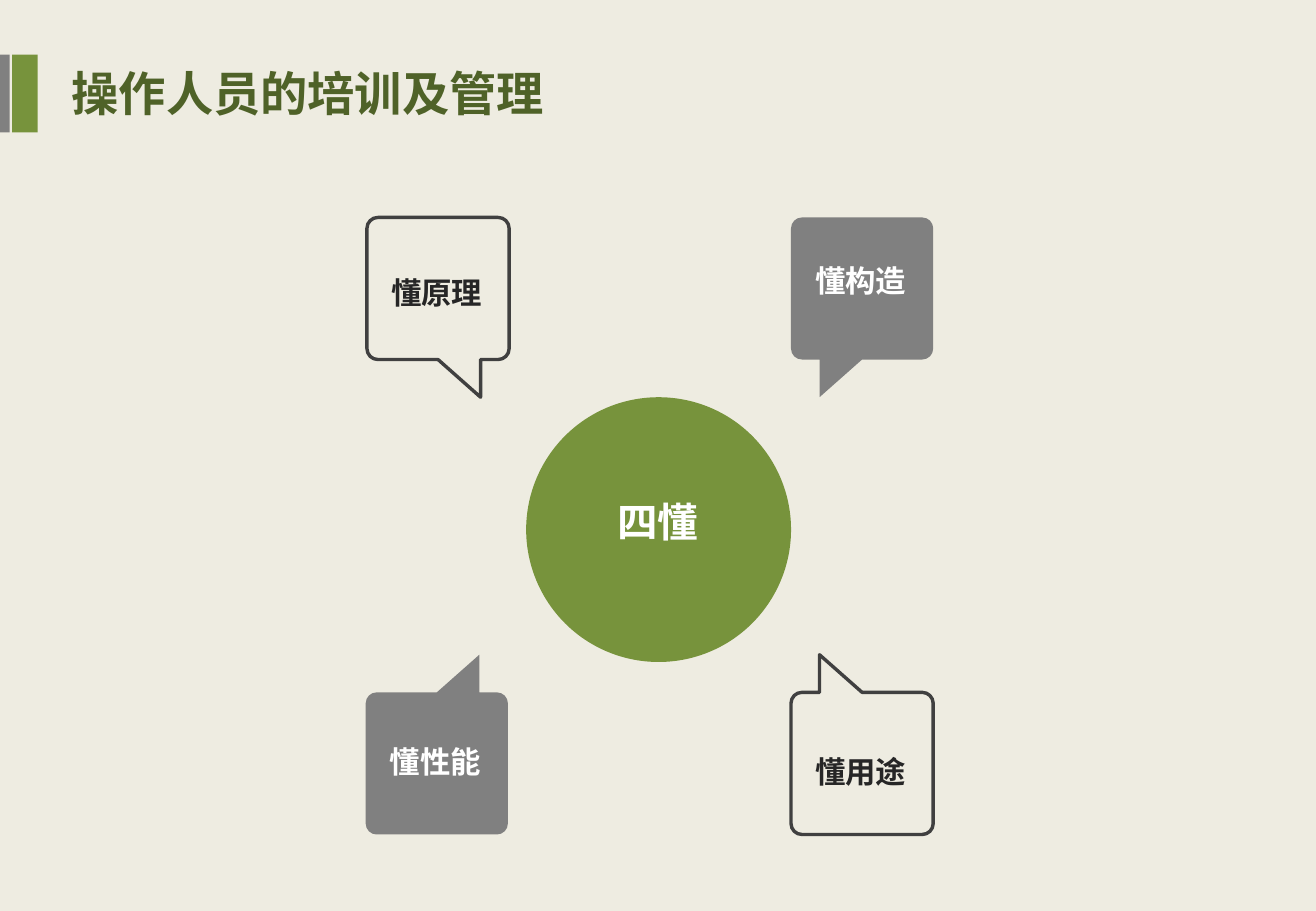
from pptx import Presentation
from pptx.dml.color import RGBColor
from pptx.enum import shapes, text
from pptx.oxml import ns
from pptx.util import Inches, Pt

FONT = "Noto Sans CJK SC"
COLORS = {
    "page": "EEECE1", "green": "77933C", "gray": "808080", "line": "404040",
    "ink": "262626", "white": "FFFFFF", "title": "4F6228",
}
TITLE = "操作人员的培训及管理"
CENTER = "四懂"
BARS = [(0.1, 0.21, "green"), (0, 0.08, "gray")]
BUBBLES = [
    ("懂构造", 6.51, 1.79, -1, 1, True, 2.11, 0.4),
    ("懂用途", 6.51, 5.7, -1, -1, False, 6, 0.56),
    ("懂性能", 3.01, 5.7, 1, -1, True, 6.07, 0.4),
    ("懂原理", 3.02, 1.79, 1, 1, False, 2.06, 0.5),
]
SIDE, ROUND, TAIL, DROP = 1.17, 0.09, 0.35, 0.31
HALF = SIDE / 2
INNER = HALF - ROUND
BEND = HALF - ROUND * 0.45
CORNERS = (1, 8, 12, 16)


def color(name):
    return RGBColor.from_string(COLORS[name])


def paint(shape, fill=None, line=None):
    shape.shadow.inherit = False
    if fill:
        shape.fill.solid()
        shape.fill.fore_color.rgb = color(fill)
    else:
        shape.fill.background()
    if line:
        shape.line.color.rgb = color(line)
        shape.line.width = Pt(2)
    else:
        shape.line.fill.background()


def write(shape, words, size, tint, align=text.PP_ALIGN.LEFT, space=1):
    frame = shape.text_frame
    frame.text = words
    para = frame.paragraphs[0]
    para.alignment = align
    para.line_spacing = space
    font = para.font
    font.name, font.size, font.bold = FONT, Pt(size), True
    font.color.rgb = color(tint)
    latin = para._p.pPr.find(ns.qn("a:defRPr")).find(ns.qn("a:latin"))
    latin.addnext(latin.makeelement(ns.qn("a:ea"), {"typeface": FONT}))
    return frame


def label(left, top, width, height):
    box = slide.shapes.add_textbox(*map(Inches, (left, top, width, height)))
    box.text_frame.auto_size = text.MSO_AUTO_SIZE.SHAPE_TO_FIT_TEXT
    return box


def bubble(x, y, flip_x, flip_y):
    spots = [
        (INNER, -HALF), (BEND, -HALF), (HALF, -BEND), (HALF, -INNER),
        (HALF, INNER), (HALF, BEND), (BEND, HALF), (INNER, HALF),
        (TAIL, HALF), (TAIL, HALF + DROP), (0, HALF),
        (-INNER, HALF), (-BEND, HALF), (-HALF, BEND), (-HALF, INNER),
        (-HALF, -INNER), (-HALF, -BEND), (-BEND, -HALF), (-INNER, -HALF),
    ]
    spots = [(Inches(x + flip_x * a), Inches(y + flip_y * b)) for a, b in spots]
    pen = slide.shapes.build_freeform(*spots[0])
    pen.add_line_segments(spots[1:], close=True)
    shape = pen.convert_to_shape()
    lines = list(shape._element.iter(ns.qn("a:lnTo")))
    for first in (0, 4, 11, 15):
        curve = lines[first].makeelement(ns.qn("a:cubicBezTo"), {})
        lines[first].addprevious(curve)
        for line in lines[first:first + 3]:
            curve.append(line[0])
            line.getparent().remove(line)
    return shape


deck = Presentation()
deck.slide_width, deck.slide_height = Inches(10.83), Inches(7.5)
slide = deck.slides.add_slide(deck.slide_layouts[5])
slide.background.fill.solid()
slide.background.fill.fore_color.rgb = color("page")

for left, width, fill in BARS:
    bar = slide.shapes.add_shape(
        shapes.MSO_SHAPE.RECTANGLE, Inches(left), Inches(0.45), Inches(width), Inches(0.64))
    paint(bar, fill)

disc = slide.shapes.add_shape(
    shapes.MSO_SHAPE.OVAL, Inches(4.33), Inches(3.27), Inches(2.18), Inches(2.18))
paint(disc, "green")

for words, left, top, flip_x, flip_y, solid, row, height in BUBBLES:
    shape = bubble(left + HALF, top + HALF, flip_x, flip_y)
    paint(shape, "gray" if solid else None, None if solid else "line")

for words, left, top, flip_x, flip_y, solid, row, height in BUBBLES:
    box = label(left + 0.1, row, 0.96, height)
    frame = write(box, words, 18, "white" if solid else "ink", space=1 if solid else 1.5)
    frame.word_wrap = not solid

core = write(label(4.8, 4.04, 1.23, 0.5), CENTER, 24, "white", text.PP_ALIGN.CENTER)
core.word_wrap = True

title = slide.shapes.title
title.left, title.top, title.width, title.height = map(Inches, (0.49, 0.48, 7.56, 0.57))
head = write(title, TITLE, 28, "title")
head.vertical_anchor = text.MSO_ANCHOR.MIDDLE
head.auto_size = text.MSO_AUTO_SIZE.NONE

deck.save("out.pptx")
